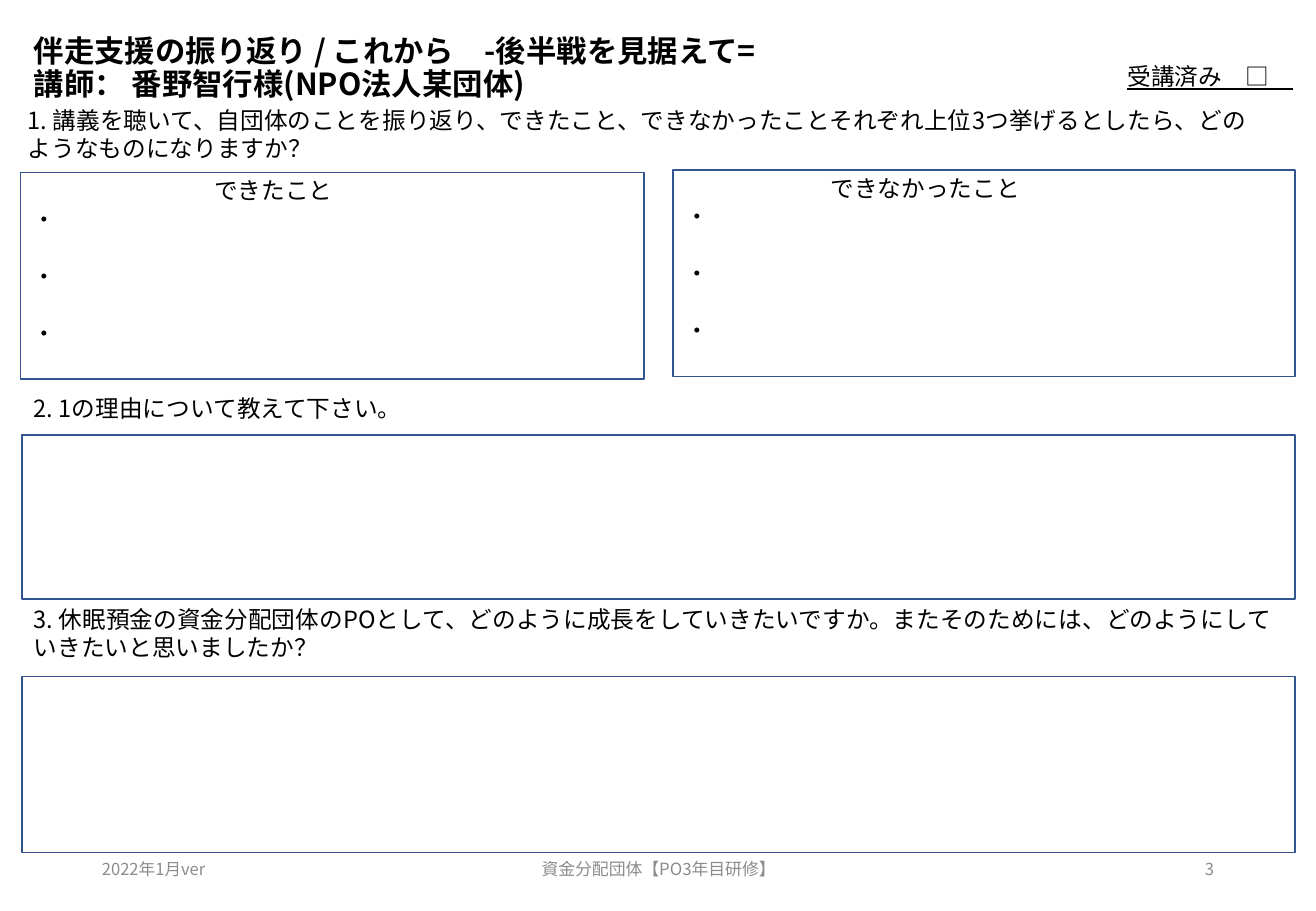
"""Build the reflection worksheet slide for the year-three training."""
import pptx
import pptx.dml.color
import pptx.enum.shapes
import pptx.enum.text
import pptx.oxml.ns
import pptx.util
from lxml import etree

PX = 9144
THEME = {
    "font": "Noto Sans CJK JP",
    "ink": "000000", "muted": "8C8C8C", "paper": "FFFFFF", "border": "325491",
    "title": 18, "body": 14, "footer": 10, "footer_small": 9.8, "line": 1,
}
ALIGN = pptx.enum.text.PP_ALIGN
ANCHOR = pptx.enum.text.MSO_ANCHOR


def rgb(name):
    return pptx.dml.color.RGBColor.from_string(THEME[name])


def write(tf, text, size="body", color="ink", align=ALIGN.LEFT, anchor=ANCHOR.TOP, **font):
    tf.word_wrap = True
    tf.vertical_anchor = anchor
    tf.text = text
    for p in tf.paragraphs:
        p.alignment = align
        for r in p.runs:
            values = {"name": THEME["font"], "size": pptx.util.Pt(THEME[size]), **font}
            for key, value in values.items():
                setattr(r.font, key, value)
            r.font.color.rgb = rgb(color)
            ea = etree.SubElement(r.font._element, pptx.oxml.ns.qn("a:ea"))
            ea.set("typeface", THEME["font"])


prs = pptx.Presentation()
prs.slide_width, prs.slide_height = 1083 * PX, 750 * PX
s = prs.slides.add_slide(prs.slide_layouts[6])

answer_boxes = [
    (17, 142, 513, 170, "できたこと"),
    (554, 140, 512, 170, "できなかったこと"),
    (18, 358, 1048, 135, None),
    (18, 557, 1048, 145, None),
]
for x, y, w, h, heading in answer_boxes:
    sp = s.shapes.add_shape(pptx.enum.shapes.MSO_SHAPE.RECTANGLE, x * PX, y * PX, w * PX, h * PX)
    sp.shadow.inherit = False
    sp.fill.solid()
    sp.fill.fore_color.rgb = rgb("paper")
    sp.line.color.rgb = rgb("border")
    sp.line.width = pptx.util.Pt(THEME["line"])
    if heading:
        tf = sp.text_frame
        write(tf, "\n".join([heading, "・", "・", "・"]))
        tf.margin_top, tf.margin_bottom, tf.margin_right = 3 * PX, 0, 107 * PX
        tf.paragraphs[0].alignment = ALIGN.CENTER
        for p in tf.paragraphs[1:3]:
            p.space_after = pptx.util.Pt(17)

title = {"size": "title", "anchor": ANCHOR.MIDDLE, "bold": True}
footer = {"size": "footer_small", "color": "muted", "anchor": ANCHOR.MIDDLE}
labels = [
    (18, 14, 934, 86, "伴走支援の振り返り / これから　-後半戦を見据えて=\v講師： 番野智行様(NPO法人某団体)", title),
    (13, 82, 1039, 57, "1. 講義を聴いて、自団体のことを振り返り、できたこと、できなかったことそれぞれ上位3つ挙げるとしたら、どのようなものになりますか？", {}),
    (18, 319, 1048, 34, "2. 1の理由について教えて下さい。", {}),
    (18, 493, 1048, 57, "3. 休眠預金の資金分配団体のPOとして、どのように成長をしていきたいですか。またそのためには、どのようにしていきたいと思いましたか？", {}),
    (918, 46, 164, 34, "受講済み　□　", {"underline": True}),
    (74, 695, 244, 40, "2022年1月ver", footer),
    (359, 695, 366, 40, "資金分配団体【PO3年目研修】", {**footer, "size": "footer", "align": ALIGN.CENTER}),
    (765, 695, 244, 40, "3", {**footer, "align": ALIGN.RIGHT}),
]
for x, y, w, h, text, style in labels:
    tf = s.shapes.add_textbox(x * PX, y * PX, w * PX, h * PX).text_frame
    write(tf, text, **style)
    if style is title:
        tf.paragraphs[0].line_spacing = 0.9

prs.save("out.pptx")
